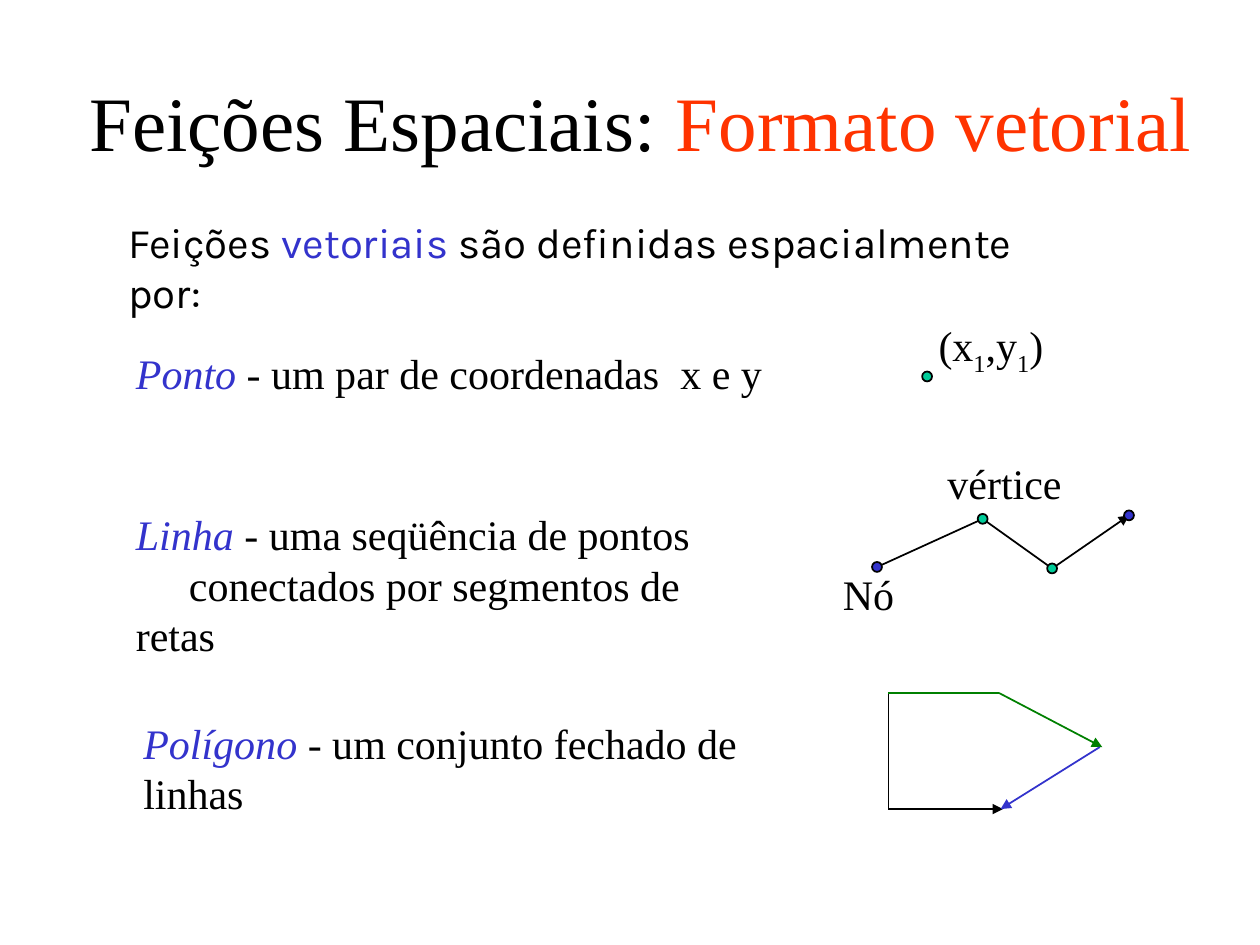
"""Build the slide on vector spatial features: point, line and polygon."""
from itertools import pairwise

from lxml.etree import SubElement
from pptx import Presentation
from pptx.dml.color import RGBColor
from pptx.enum.shapes import MSO_CONNECTOR as CONN, MSO_SHAPE as SHAPE
from pptx.enum.text import MSO_ANCHOR as ANCHOR, PP_ALIGN as ALIGN
from pptx.oxml.ns import qn
from pptx.util import Cm, Pt

BLACK = RGBColor(0, 0, 0)
RED = RGBColor(0xFF, 0x33, 0x00)
BLUE = RGBColor(0x33, 0x33, 0xCC)
GREEN = RGBColor(0x00, 0x80, 0x00)
TEAL = RGBColor(0x00, 0xCC, 0x99)
SERIF, SANS = "Times New Roman", "Karla"
DOT = 0.2

TERM = {"color": BLUE, "italic": True}
SUB = {"sub": True}
TITLE = [("Feições Espaciais: ", {}), ("Formato vetorial", {"color": RED})]
INTRO = [("Feições ", {}), ("vetoriais", {"color": BLUE}),
         (" são definidas espacialmente por:", {})]
DEFINITIONS = [
    ((2.49, 6.88, 13.13, 2.29),
     [[("Ponto", TERM), (" - um par de coordenadas  x e y", {})]]),
    ((2.49, 10.13, 12.95, 3.5),
     [[("Linha", TERM), (" - uma seqüência de pontos", {})],
      [("conectados por segmentos de retas", {})]]),
    ((2.64, 14.33, 14.5, 2.29),
     [[("Polígono", TERM), (" - um conjunto fechado de linhas", {})]]),
]
LABELS = [
    ((18.67, 6.32, 2.69, 1.27),
     [("(x", {}), ("1", SUB), (",y", {}), ("1", SUB), (")", {})]),
    ((16.74, 11.33, 1.55, 1.27), [("Nó", {})]),
    ((18.85, 9.09, 2.82, 1.27), [("vértice", {})]),
]
POINT = (18.69, 7.59)
POLYLINE = [(17.68, 11.43), (19.81, 10.46), (21.21, 11.46), (22.76, 10.39)]
DOT_COLORS = [BLUE, TEAL, TEAL, BLUE]
PATHS = [
    (BLACK, POLYLINE),
    (BLACK, [(17.91, 13.97), (17.91, 16.31), (20.22, 16.31)]),
    (GREEN, [(17.91, 13.97), (20.14, 13.97), (22.22, 15.06)]),
    (BLUE, [(22.17, 15.06), (20.17, 16.31)]),
]


def add_text(s, box, paragraphs, size=24, face=SERIF, wrap=True,
             align=ALIGN.LEFT, anchor=ANCHOR.TOP, indent=0):
    tf = s.shapes.add_textbox(*map(Cm, box)).text_frame
    tf.word_wrap, tf.vertical_anchor = wrap, anchor
    for i, runs in enumerate(paragraphs):
        p = tf.add_paragraph() if i else tf.paragraphs[0]
        p.alignment = align
        if i:
            p._p.get_or_add_pPr().set("indent", str(Cm(indent)))
        for text, style in runs:
            r = p.add_run()
            r.text = text
            font = {"name": face, "size": Pt(size), "italic": style.get("italic", False)}
            for key, value in font.items():
                setattr(r.font, key, value)
            r.font.color.rgb = style.get("color", BLACK)
            if style.get("sub"):
                r._r.get_or_add_rPr().set("baseline", "-25000")


def add_path(s, color, points):
    for start, end in pairwise(points):
        line = s.shapes.add_connector(CONN.STRAIGHT, *map(Cm, start + end))
        line.line.color.rgb, line.line.width = color, Pt(1)
        if end == points[-1]:
            SubElement(line.line._get_or_add_ln(), qn("a:tailEnd"), type="triangle")
        SubElement(line._element.spPr, qn("a:effectLst"))


def add_dot(s, center, color):
    x, y = (Cm(v - DOT / 2) for v in center)
    sp = s.shapes.add_shape(SHAPE.OVAL, x, y, Cm(DOT), Cm(DOT))
    sp.shadow.inherit = False
    sp.fill.solid()
    sp.fill.fore_color.rgb = color
    sp.line.color.rgb, sp.line.width = BLACK, Pt(1)


def main():
    prs = Presentation()
    prs.slide_width, prs.slide_height = Cm(25.4), Cm(19.05)
    s = prs.slides.add_slide(prs.slide_layouts[6])
    add_text(s, (1.27, 0.84, 23.29, 3.18), [TITLE], size=44,
             align=ALIGN.CENTER, anchor=ANCHOR.MIDDLE)
    add_text(s, (2.34, 4.24, 19.46, 2.29), [INTRO], face=SANS)
    for box, paragraphs in DEFINITIONS:
        add_text(s, box, paragraphs, indent=1.07)
    for color, points in PATHS:
        add_path(s, color, points)
    for center, color in zip([POINT] + POLYLINE, [TEAL] + DOT_COLORS):
        add_dot(s, center, color)
    for box, runs in LABELS:
        add_text(s, box, [runs], wrap=False)
    prs.save("out.pptx")


if __name__ == "__main__":
    main()
